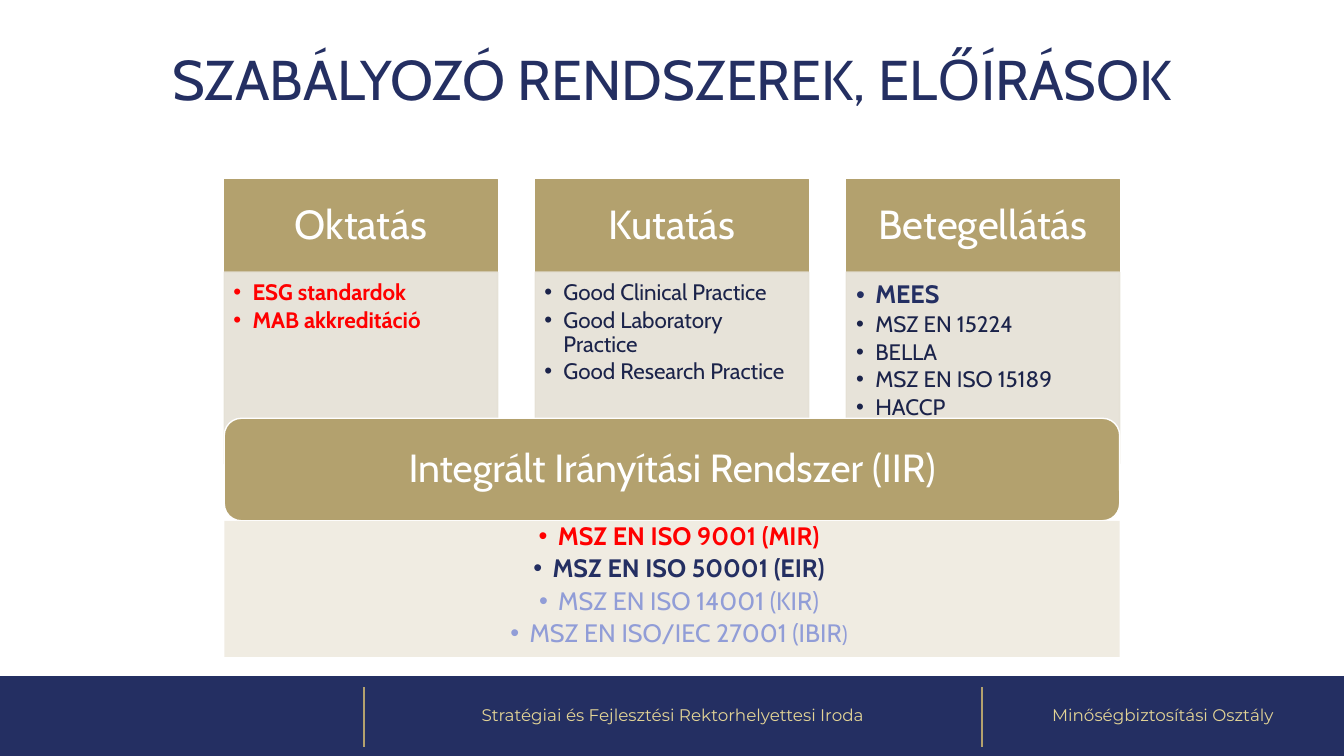
from dataclasses import dataclass

from lxml import etree
from pptx import Presentation, util as u
from pptx.dml.color import RGBColor
from pptx.enum import shapes, text
from pptx.oxml.ns import qn

COLS, ROWS = 160, 90
CELL = u.Inches(1) / 12


@dataclass(frozen=True)
class Theme:
    navy: str = "242F62"
    ink: str = "1B234A"
    gold: str = "B3A16E"
    pale: str = "E3D496"
    sand: str = "E5E0D5"
    cream: str = "F0ECE2"
    white: str = "FFFFFF"
    red: str = "FF0000"
    lilac: str = "919DD7"
    font: str = "Cabin"
    foot: str = "Montserrat"
    title: int = 40
    head: int = 29
    bar: int = 28
    lead: int = 18
    item: int = 16
    small: int = 12


T = Theme()
LEFT, SPAN = 26.7, 106.6
WIDE = 32.55
TOP, HEAD, BODY = 21.4, 11, 22.8
FOOT, DEEP = 80.5, 9.5
RULES = 43.3, 116.9

AREAS = [
    ("Oktatás", [("ESG standardok", T.red, True), ("MAB akkreditáció", T.red, True)]),
    ("Kutatás", [("Good Clinical Practice", T.ink), ("Good Laboratory Practice", T.ink),
                 ("Good Research Practice", T.ink)]),
    ("Betegellátás", [("MEES", T.navy, True, T.lead), ("MSZ EN 15224", T.ink), ("BELLA", T.ink),
                      ("MSZ EN ISO 15189", T.ink), ("HACCP", T.ink)]),
]
NORMS = [
    ("MSZ EN ISO 9001 (MIR)", T.red, True, T.lead),
    ("MSZ EN ISO 50001 (EIR)", T.navy, True, T.lead),
    ("MSZ EN ISO 14001 (KIR)", T.lilac, False, T.lead),
    ("MSZ EN ISO/IEC 27001 (IBIR", T.lilac, False, T.lead),
]


def grid(*cells):
    return [round(c * CELL) for c in cells]


def rgb(code):
    return RGBColor.from_string(code)


def fade(fmt, share):
    """Set the opacity, in per cent, of a solid fill."""
    color = fmt._xPr.find(qn("a:solidFill"))[0]
    etree.SubElement(color, qn("a:alpha"), val=str(share * 1000))


def block(slide, area, fill, line=None, kind=shapes.MSO_SHAPE.RECTANGLE, alpha=None):
    shape = slide.shapes.add_shape(kind, *grid(*area))
    shape.shadow.inherit = False
    shape.fill.solid()
    shape.fill.fore_color.rgb = rgb(fill)
    if line:
        shape.line.color.rgb = rgb(line)
        shape.line.width = u.Pt(1)
    else:
        shape.line.fill.background()
    if alpha:
        fade(shape.fill, alpha)
        fade(shape.line.fill, alpha)
    return shape


def rule(slide, x, top, end):
    line = slide.shapes.add_connector(shapes.MSO_CONNECTOR.STRAIGHT, *grid(x, top, x, end))
    line.line.color.rgb = rgb(T.gold)
    line.line.width = u.Pt(1.5)
    etree.SubElement(line._element.spPr, qn("a:effectLst"))


def frame(shape, pads=(0.1, 0.05, 0.1, 0.05), mid=True):
    """Prepare a shape's text frame; pads are left, top, right, bottom inches."""
    box = shape.text_frame
    box.word_wrap = True
    box.vertical_anchor = text.MSO_ANCHOR.MIDDLE if mid else text.MSO_ANCHOR.TOP
    box.margin_left, box.margin_top, box.margin_right, box.margin_bottom = map(u.Inches, pads)
    return box


def style(run, size, color, bold=False, font=T.font):
    run.font.size = u.Pt(size)
    run.font.name = font
    run.font.bold = bold
    run.font.color.rgb = rgb(color)


def write(para, words, *, size, color, bold=False, font=T.font, center=True, bullet=False, after=0):
    para.alignment = text.PP_ALIGN.CENTER if center else text.PP_ALIGN.LEFT
    para.line_spacing = 0.9
    para.space_before = u.Pt(0)
    para.space_after = u.Pt(size * after)
    if bullet:
        props = para._p.get_or_add_pPr()
        props.set("marL", str(u.Inches(0.19)))
        props.set("indent", str(-u.Inches(0.19)))
        etree.SubElement(props, qn("a:buFont"), typeface="Arial")
        etree.SubElement(props, qn("a:buChar"), char="•")
    run = para.add_run()
    run.text = words
    style(run, size, color, bold, font)


def items(box, rows, center=False, after=0.15):
    """Fill a frame with bullets given as words, colour, bold, size."""
    for n, (words, color, *rest) in enumerate(rows):
        bold, size = (*rest, False, T.item)[:2] if len(rest) != 1 else (rest[0], T.item)
        para = box.add_paragraph() if n else box.paragraphs[0]
        write(para, words, size=size, color=color, bold=bold, center=center, bullet=True, after=after)
    return para


def label(slide, area, words, **form):
    shape = slide.shapes.add_textbox(*grid(*area))
    write(frame(shape).paragraphs[0], words, **form)


def column(slide, x, name, rows):
    head = block(slide, (x, TOP, WIDE, HEAD), T.gold, T.gold)
    write(frame(head, (0.23, 0.13, 0.23, 0.13)).paragraphs[0], name, size=T.head, color=T.white)
    body = block(slide, (x, TOP + HEAD, WIDE, BODY), T.sand, T.sand, alpha=90)
    pads = (0.1, 0.1, 0.14, 0.16) if rows[0][-1] == T.lead else (0.09, 0.09, 0.12, 0.14)
    items(frame(body, pads, mid=False), rows)


def system(slide):
    bar = block(slide, (LEFT, 49.8, SPAN, 12.2), T.gold, T.white, shapes.MSO_SHAPE.ROUNDED_RECTANGLE)
    write(frame(bar, (0.17,) * 4).paragraphs[0], "Integrált Irányítási Rendszer (IIR)",
          size=T.bar, color=T.white)
    panel = block(slide, (LEFT, 62, SPAN, 16.2), T.cream)
    last = items(frame(panel, (0.28, 0.03, 0.14, 0.03), mid=False), NORMS, center=True, after=0.2)
    end = last.add_run()
    end.text = ")"
    style(end, T.item, T.lilac)


def footer(slide):
    block(slide, (0, FOOT, COLS, DEEP), T.navy)
    for x in RULES:
        rule(slide, x, 81.8, 88.9)
    names = "Stratégiai és Fejlesztési Rektorhelyettesi Iroda", "Minőségbiztosítási Osztály"
    for x, end, name in zip(RULES, (RULES[1], COLS), names):
        label(slide, (x, FOOT, end - x, DEEP), name, size=T.small, color=T.pale, font=T.foot)


def main():
    deck = Presentation()
    deck.slide_width, deck.slide_height = grid(COLS, ROWS)
    slide = deck.slides.add_slide(deck.slide_layouts[6])
    footer(slide)
    label(slide, (11, 4.8, 138, 10), "SZABÁLYOZÓ RENDSZEREK, ELŐÍRÁSOK", size=T.title, color=T.navy)
    step = (SPAN - WIDE) / (len(AREAS) - 1)
    for n, (name, rows) in enumerate(AREAS):
        column(slide, LEFT + n * step, name, rows)
    system(slide)
    deck.save("out.pptx")


if __name__ == "__main__":
    main()
